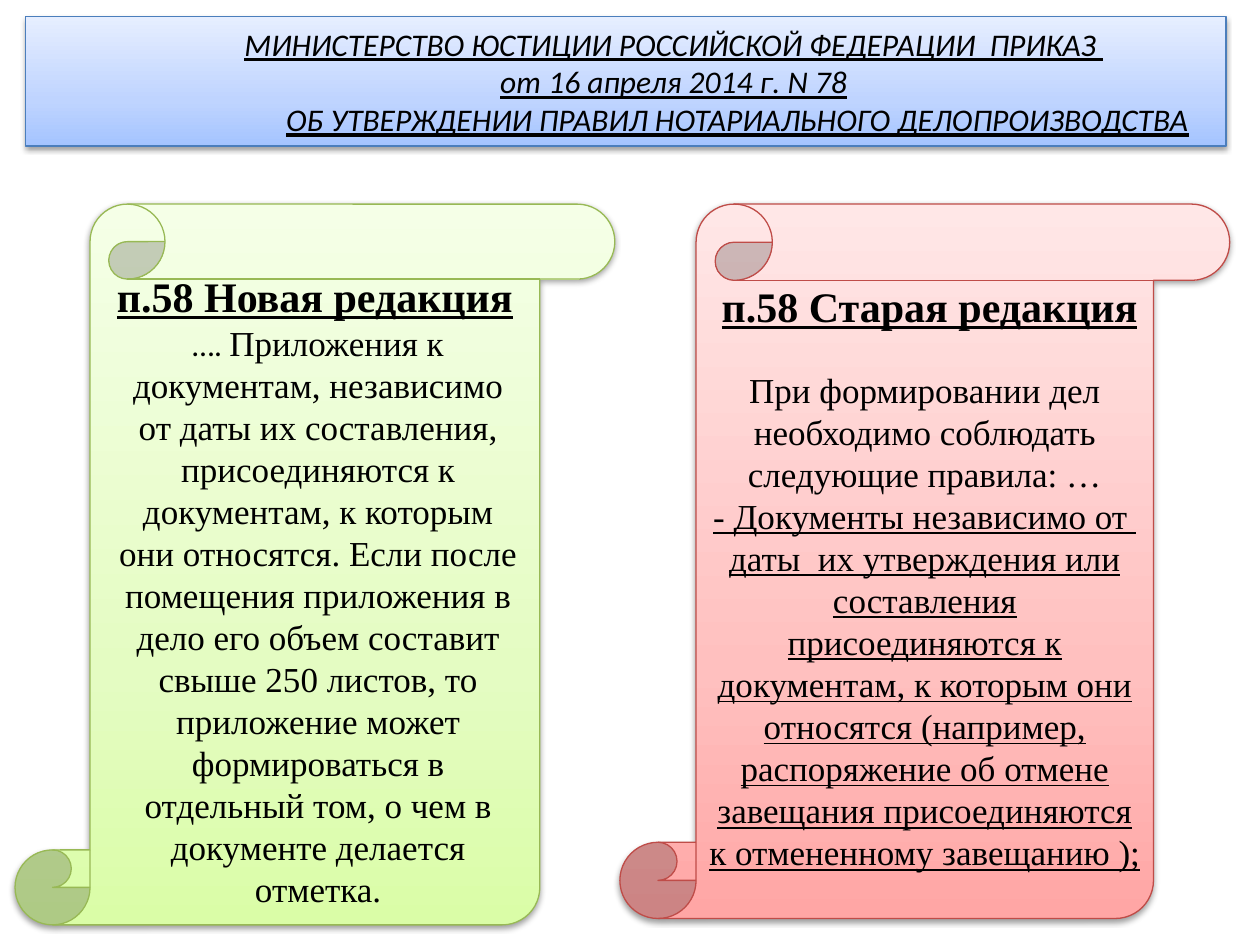
from copy import deepcopy
from dataclasses import dataclass

from lxml import etree
from pptx import Presentation
from pptx.dml.color import RGBColor
from pptx.enum.shapes import MSO_SHAPE
from pptx.enum.text import MSO_ANCHOR, MSO_AUTO_SIZE, PP_ALIGN
from pptx.oxml.ns import qn
from pptx.util import Inches, Pt

SCROLL = MSO_SHAPE.VERTICAL_SCROLL
TOP, MIDDLE = MSO_ANCHOR.TOP, MSO_ANCHOR.MIDDLE
LEFT, CENTER = PP_ALIGN.LEFT, PP_ALIGN.CENTER
NO_FIT = MSO_AUTO_SIZE.NONE


@dataclass(frozen=True)
class Theme:
    # Each tone holds three gradient stops from the bottom up, then the line
    blue: tuple = ("A4C4FF", "BFD4FF", "E6EEFF", "4B7EBC")
    green: tuple = ("DAFDA7", "E4FCC2", "F5FFE7", "98B955")
    red: tuple = ("FFA6A5", "FFC0BF", "FFE7E7", "BF4C48")
    stops: tuple = (0, 0.35, 1)
    ink: str = "000000"
    sans: str = "Calibri"
    serif: str = "Times New Roman"
    small: int = 18
    body: int = 20
    head: int = 24


THEME = Theme()

ORDER = (
    # Left indent in inches, text
    (1.64, "МИНИСТЕРСТВО ЮСТИЦИИ РОССИЙСКОЙ ФЕДЕРАЦИИ  ПРИКАЗ "),
    (3.67, "от 16 апреля 2014 г. N 78"),
    (1.97, "ОБ УТВЕРЖДЕНИИ ПРАВИЛ НОТАРИАЛЬНОГО ДЕЛОПРОИЗВОДСТВА"),
)
NEW_HEAD = "п.58 Новая редакция"
NEW_RULE = (
    "Приложения к документам, независимо от даты их составления, "
    "присоединяются к документам, к которым они относятся. Если после "
    "помещения приложения в дело его объем составит свыше 250 листов, то "
    "приложение может формироваться в отдельный том, о чем в документе "
    "делается отметка."
)
OLD_HEAD = "п.58 Старая редакция"
OLD_INTRO = "При формировании дел необходимо соблюдать следующие правила: …"
OLD_RULE = (
    "- Документы независимо от  даты  их утверждения или составления "
    "присоединяются к документам, к которым они относятся (например, "
    "распоряжение об отмене завещания присоединяются к отмененному "
    "завещанию );"
)


def place(shape, left, top, width, height):
    shape.left, shape.top = Inches(left), Inches(top)
    shape.width, shape.height = Inches(width), Inches(height)


def paint(shape, tone):
    """Give a shape its gradient, outline and soft shadow."""
    fill = shape.fill
    fill.gradient()
    fill.gradient_angle = 90
    stops = shape.element.spPr.find(qn("a:gradFill")).find(qn("a:gsLst"))
    stops.append(deepcopy(stops[0]))
    for stop, spot, color in zip(fill.gradient_stops, THEME.stops, tone):
        stop.position = spot
        stop.color.rgb = RGBColor.from_string(color)
    shape.line.color.rgb = RGBColor.from_string(tone[-1])
    shape.line.width = Pt(0.75)
    shape.shadow.inherit = False
    effects = shape.element.spPr.find(qn("a:effectLst"))
    shade = etree.SubElement(
        effects, qn("a:outerShdw"), blurRad=str(Pt(3.1)),
        dist=str(Pt(1.6)), dir="5400000", rotWithShape="0")
    color = etree.SubElement(shade, qn("a:srgbClr"), val=THEME.ink)
    etree.SubElement(color, qn("a:alpha"), val="38000")


def style(run, face, size, bold=False, italic=False, under=False):
    font = run.font
    font.name, font.size = face, Pt(size)
    font.bold, font.italic, font.underline = bold, italic, under
    font.color.rgb = RGBColor.from_string(THEME.ink)


def frame(shape, anchor=TOP):
    body = shape.text_frame
    body.word_wrap = True
    body.auto_size = NO_FIT
    body.vertical_anchor = anchor
    return body


def scroll(slide, box, tone):
    shape = slide.shapes.add_shape(SCROLL, *map(Inches, box))
    paint(shape, tone)
    return shape


def note(slide, box, head):
    """Add a text box that opens with an underlined heading."""
    body = frame(slide.shapes.add_textbox(*map(Inches, box)))
    body.text = head
    style(body.paragraphs[0].runs[0], THEME.serif, THEME.head,
          bold=True, under=True)
    return body


def banner(slide):
    title = slide.shapes.title
    place(title, 0.2, 0.13, 9.53, 1.03)
    paint(title, THEME.blue)
    body = frame(title, MIDDLE)
    body.text = "\n".join(text for _, text in ORDER)
    for para, (indent, _) in zip(body.paragraphs, ORDER):
        para.alignment = LEFT
        para.line_spacing = Pt(21.6)
        para.space_before = Pt(0)
        para._p.get_or_add_pPr().set("marL", str(Inches(indent)))
        style(para.runs[0], THEME.sans, THEME.small, italic=True, under=True)


def old_rule(slide):
    shape = scroll(slide, (4.92, 1.62, 4.84, 5.67), THEME.red)
    body = frame(shape)
    body.margin_top = Inches(0.7)
    body.text = f"{OLD_INTRO}\n{OLD_RULE}"
    for para, under in zip(body.paragraphs, (False, True)):
        para.alignment = CENTER
        style(para.runs[0], THEME.serif, THEME.body, under=under)
    note(slide, (5.63, 2.18, 4.06, 0.81), OLD_HEAD)


def new_rule(slide):
    scroll(slide, (0.12, 1.62, 4.76, 5.72), THEME.green)
    body = note(slide, (0.83, 2.1, 3.39, 5.2), NEW_HEAD)
    para = body.add_paragraph()
    para.alignment = CENTER
    for text, face, size in (("…. ", THEME.sans, THEME.small),
                             (NEW_RULE, THEME.serif, THEME.body)):
        run = para.add_run()
        run.text = text
        style(run, face, size)


def main():
    deck = Presentation()
    deck.slide_width, deck.slide_height = Inches(10), Inches(7.5)
    slide = deck.slides.add_slide(deck.slide_layouts[5])
    # Heading of the order
    banner(slide)
    # Old and new wording side by side
    old_rule(slide)
    new_rule(slide)
    deck.save("out.pptx")


if __name__ == "__main__":
    main()
